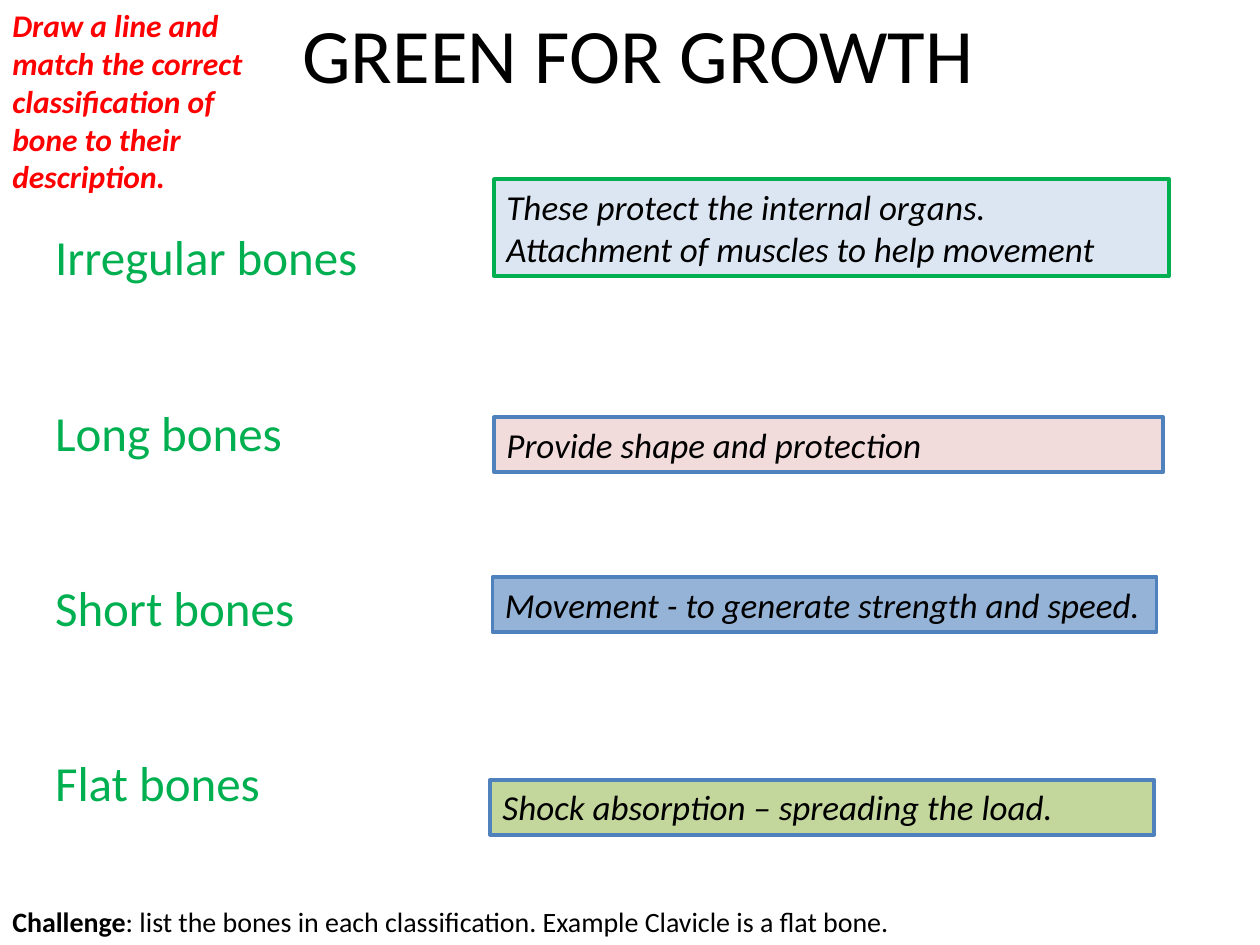
from pptx import Presentation
from pptx import util as u
from pptx.dml.color import RGBColor
from pptx.enum import shapes, text

BLACK = RGBColor(0x00, 0x00, 0x00)
RED = RGBColor(0xFF, 0x00, 0x00)
GREEN = RGBColor(0x00, 0xB0, 0x50)
BLUE = RGBColor(0x4F, 0x81, 0xBD)
PALE_BLUE = RGBColor(0xDC, 0xE6, 0xF2)
PALE_RED = RGBColor(0xF2, 0xDC, 0xDB)
MID_BLUE = RGBColor(0x95, 0xB3, 0xD7)
OLIVE = RGBColor(0xC3, 0xD6, 0x9B)

BONES = ["Irregular bones", "Long bones", "Short bones", "Flat bones"]

# left, top, width, height in cm; fill; outline; wording
DESCRIPTIONS = [
    (9.96, 3.61, 13.61, 1.96, PALE_BLUE, GREEN,
     "These protect the internal organs.\vAttachment of muscles to help movement"),
    (9.96, 8.41, 13.49, 1.11, PALE_RED, BLUE, "Provide shape and protection"),
    (9.93, 11.63, 13.39, 1.11, MID_BLUE, BLUE,
     "Movement - to generate strength and speed."),
    (9.88, 15.72, 13.39, 1.11, OLIVE, BLUE,
     "Shock absorption – spreading the load."),
]


class Worksheet:
    font_name = "Calibri"

    def __init__(self, deck):
        self.slide = deck.slides.add_slide(deck.slide_layouts[5])

    def set_text(self, frame, lines, size, color, bold=False, italic=False, gap=0):
        """Fill a frame with one left-aligned paragraph per line; gap is in points."""
        frame.word_wrap = True
        frame.auto_size = text.MSO_AUTO_SIZE.NONE
        frame.vertical_anchor = text.MSO_ANCHOR.TOP
        for number, line in enumerate(lines):
            paragraph = frame.add_paragraph() if number else frame.paragraphs[0]
            paragraph.text = line
            paragraph.alignment = text.PP_ALIGN.LEFT
            paragraph.space_before = u.Pt(gap if number else 0)
            font = paragraph.font
            font.name, font.size = self.font_name, u.Pt(size)
            font.bold, font.italic = bold, italic
            font.color.rgb = color

    def title(self, left, top, width, height, wording):
        heading = self.slide.shapes.title
        heading.left, heading.top = u.Cm(left), u.Cm(top)
        heading.width, heading.height = u.Cm(width), u.Cm(height)
        self.set_text(heading.text_frame, [wording], 44, BLACK)
        heading.text_frame.word_wrap = False

    def label(self, left, top, width, height, lines, size, color, **style):
        box = self.slide.shapes.add_textbox(
            u.Cm(left), u.Cm(top), u.Cm(width), u.Cm(height))
        self.set_text(box.text_frame, lines, size, color, **style)
        return box.text_frame

    def card(self, left, top, width, height, fill, outline, wording):
        card = self.slide.shapes.add_shape(
            shapes.MSO_SHAPE.RECTANGLE,
            u.Cm(left), u.Cm(top), u.Cm(width), u.Cm(height))
        card.shadow.inherit = False
        card.fill.solid()
        card.fill.fore_color.rgb = fill
        card.line.color.rgb = outline
        card.line.width = u.Pt(2)
        self.set_text(card.text_frame, [wording], 20, BLACK, italic=True)


def main():
    deck = Presentation()
    deck.slide_width, deck.slide_height = u.Cm(25.4), u.Cm(19.05)
    sheet = Worksheet(deck)

    sheet.title(5.84, 0, 14.22, 2.13, "GREEN FOR GROWTH")
    for description in DESCRIPTIONS:
        sheet.card(*description)
    sheet.label(0.86, 4.45, 8.13, 12.22, BONES, 28, GREEN, gap=66.5)
    sheet.label(0, 0, 5.99, 4.11,
                ["Draw a line and match the correct classification of bone "
                 "to their description."],
                18, RED, bold=True, italic=True)

    challenge = sheet.label(0, 18.11, 18.29, 0.94, ["Challenge"], 16, BLACK)
    challenge.paragraphs[0].runs[0].font.bold = True
    challenge.paragraphs[0].add_run().text = (
        ": list the bones in each classification. Example Clavicle is a flat bone.")

    deck.save("out.pptx")


if __name__ == "__main__":
    main()
